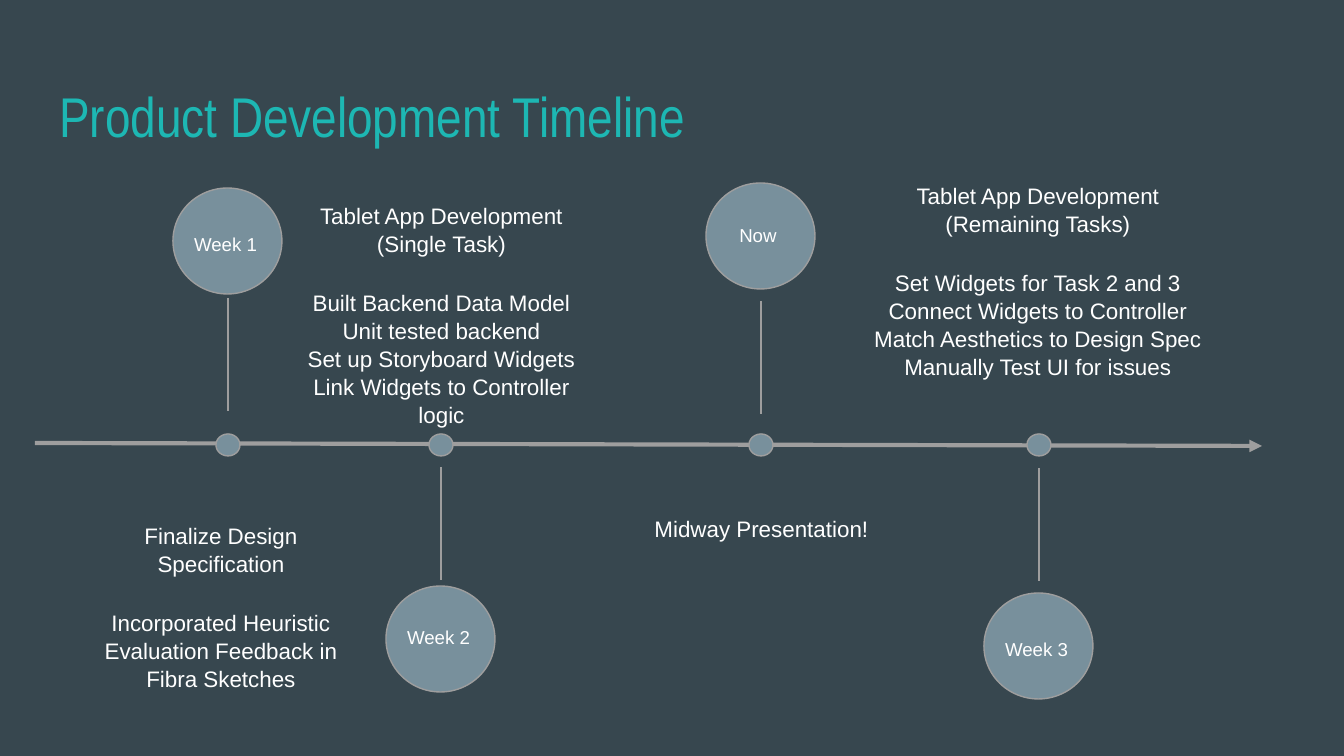
from lxml import etree
from pptx import Presentation, util as u
from pptx.dml.color import RGBColor
from pptx.enum import shapes, text
from pptx.oxml.ns import qn

EMU_PER_PX = 914400 / 134.4
BACKGROUND, DISC, RULE, WHITE, TEAL = "37474F", "78909C", "9E9E9E", "FFFFFF", "1DB7B3"
LINE_SPACING = 1.04
SECTION_GAP = 16.7

# Centre x, disc top, stem top, label, label width, label offset inside the disc
MILESTONES = [
    (228, 188, 298, "Week 1", 94, 32),
    (441, 586, 467, "Week 2", 94, 27),
    (761, 183, 301, "Now", 70, 28),
    (1039, 593, 468, "Week 3", 94, 32),
]

# Box, heading and tasks
NOTES = [
    ((79, 508, 284, 222), "Finalize Design Specification",
     ["Incorporated Heuristic Evaluation Feedback in Fibra Sketches"]),
    ((285, 188, 313, 235), "Tablet App Development (Single Task)",
     ["Built Backend Data Model", "Unit tested backend",
      "Set up Storyboard Widgets", "Link Widgets to Controller logic"]),
    ((605, 501, 313, 67), "Midway Presentation!", []),
    ((852, 168, 372, 235), "Tablet App Development (Remaining Tasks)",
     ["Set Widgets for Task 2 and 3", "Connect Widgets to Controller",
      "Match Aesthetics to Design Spec", "Manually Test UI for issues"]),
]


def px(*lengths):
    return [u.Emu(round(length * EMU_PER_PX)) for length in lengths]


def paint(color_format, hex_color):
    color_format.rgb = RGBColor.from_string(hex_color)


def fill(owner, hex_color):
    owner.fill.solid()
    paint(owner.fill.fore_color, hex_color)


def add_text(slide, box, lines, size, color=WHITE, font="Arial", align=text.PP_ALIGN.LEFT):
    """Add a text box with one paragraph per line and return its paragraphs."""
    frame = slide.shapes.add_textbox(*px(*box)).text_frame
    inset = u.Inches(0.1)
    frame_format = dict(word_wrap=True, vertical_anchor=text.MSO_ANCHOR.TOP,
                        margin_left=inset, margin_right=inset,
                        margin_top=inset, margin_bottom=inset)
    for key, value in frame_format.items():
        setattr(frame, key, value)
    frame.text = "\n".join(lines)
    for paragraph in frame.paragraphs:
        paragraph.alignment = align
        paragraph.line_spacing = LINE_SPACING
        for run in paragraph.runs:
            for key, value in dict(size=u.Pt(size), name=font).items():
                setattr(run.font, key, value)
            paint(run.font.color, color)
    return frame.paragraphs


def add_disc(slide, box, preset):
    disc = slide.shapes.add_shape(preset, *px(*box))
    disc.shadow.inherit = False
    fill(disc, DISC)
    paint(disc.line.color, RULE)
    disc.line.width = u.Pt(0.75)


def add_line(slide, ends, width):
    line = slide.shapes.add_connector(shapes.MSO_CONNECTOR.STRAIGHT, *px(*ends))
    paint(line.line.color, RULE)
    line.line.width = u.Pt(width)
    etree.SubElement(line._element.spPr, qn("a:effectLst"))
    return line


def add_axis(slide, left, top, right, bottom):
    axis = add_line(slide, (left, top, right, bottom), 2.25)
    etree.SubElement(axis.line._get_or_add_ln(), qn("a:tailEnd"), type="triangle")


def add_milestone(slide, center, disc_top, stem_top, label, label_width, label_offset):
    """Place a labelled disc, its stem and its dot on the axis around one centre."""
    add_disc(slide, (center - 55, disc_top, 109, 106), shapes.MSO_SHAPE.OVAL)
    add_line(slide, (center, stem_top, center, stem_top + 113), 0.75)
    add_disc(slide, (center - 12, 434, 24, 22), shapes.MSO_SHAPE.FLOWCHART_CONNECTOR)
    label_box = (center - label_width // 2, disc_top + label_offset, label_width, 30)
    add_text(slide, label_box, [label], 10)


def add_note(slide, box, heading, tasks):
    paragraphs = add_text(slide, box, [heading, *tasks], 12, align=text.PP_ALIGN.CENTER)
    if tasks:
        paragraphs[1].space_before = u.Pt(SECTION_GAP)


def main():
    deck = Presentation()
    deck.slide_width, deck.slide_height = px(1344, 756)
    slide = deck.slides.add_slide(deck.slide_layouts[6])
    fill(slide.background, BACKGROUND)
    add_text(slide, (46, 66, 1252, 84), ["Product Development Timeline"], 30, TEAL, "Arial Narrow")
    add_axis(slide, 35, 443, 1262, 446)
    for milestone in MILESTONES:
        add_milestone(slide, *milestone)
    for note in NOTES:
        add_note(slide, *note)
    deck.save("out.pptx")


if __name__ == "__main__":
    main()
